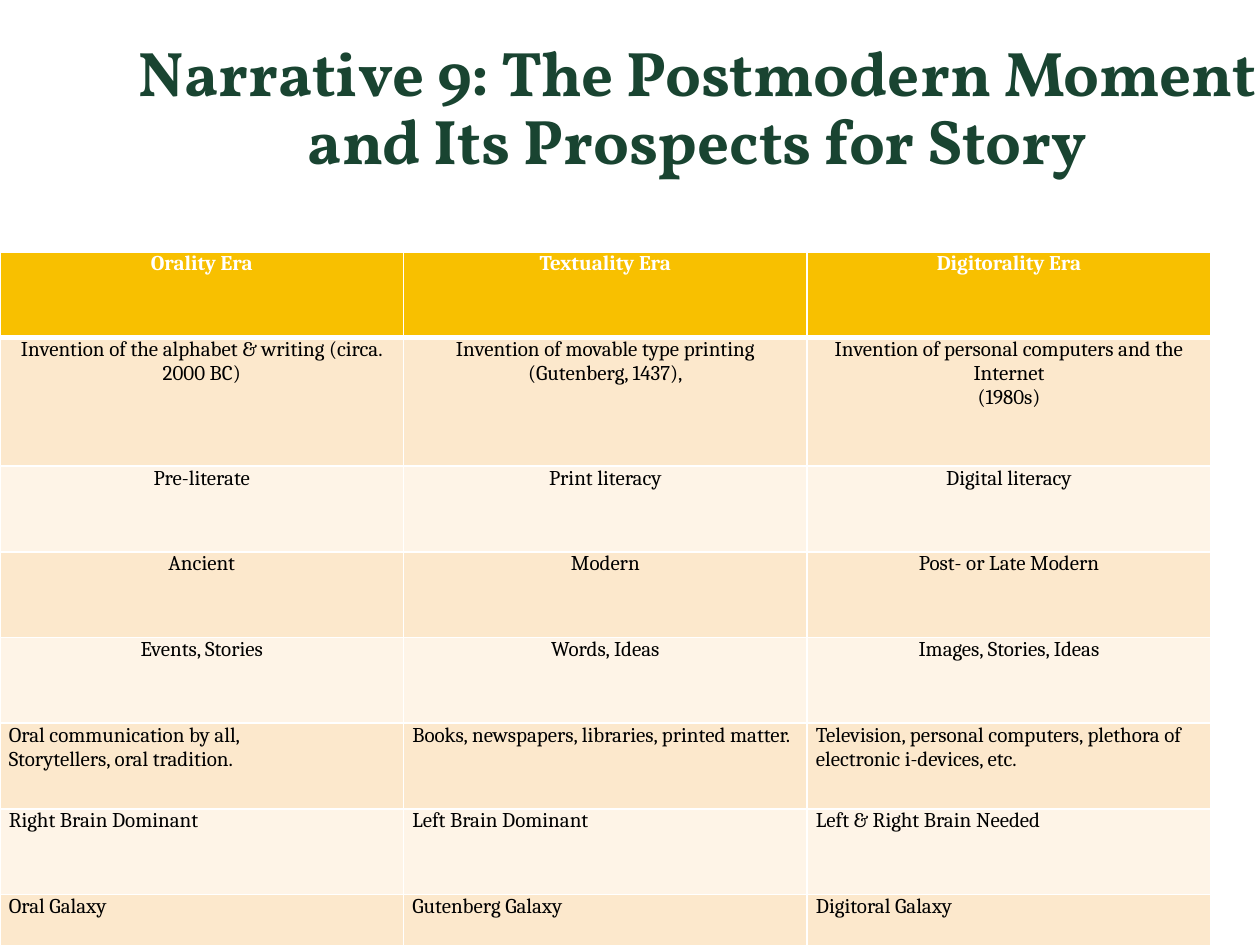
from lxml import etree
from pptx import Presentation
from pptx.dml.color import RGBColor
from pptx.enum.text import MSO_ANCHOR, PP_ALIGN
from pptx.oxml.ns import qn
from pptx.util import Inches, Pt

GREEN = RGBColor(0x19, 0x44, 0x31)
GOLD = RGBColor(0xF8, 0xC0, 0x00)
PEACH = RGBColor(0xFC, 0xE8, 0xCC)
CREAM = RGBColor(0xFE, 0xF4, 0xE7)
WHITE = RGBColor(0xFF, 0xFF, 0xFF)
BLACK = RGBColor(0x00, 0x00, 0x00)

TITLE = "Narrative 9: The Postmodern Moment and Its Prospects for Story"
ERAS = [
    ("Orality Era", "Textuality Era", "Digitorality Era"),
    ("Invention of the alphabet & writing (circa. 2000 BC)",
     "Invention of movable type printing (Gutenberg, 1437),",
     "Invention of personal computers and the Internet\n(1980s)"),
    ("Pre-literate", "Print literacy", "Digital literacy"),
    ("Ancient", "Modern", "Post- or Late Modern"),
    ("Events, Stories", "Words, Ideas", "Images, Stories, Ideas"),
    ("Oral communication by all,\nStorytellers, oral tradition.",
     "Books, newspapers, libraries, printed matter.",
     "Television, personal computers, plethora of electronic i-devices, etc."),
    ("Right Brain Dominant", "Left Brain Dominant", "Left & Right Brain Needed"),
    ("Oral Galaxy", "Gutenberg Galaxy", "Digitoral Galaxy"),
]
CENTERED_ROWS = 5
INVENTION_ROW = 1


def write_text(frame, text, *, font, size, color, bold=False,
               align=PP_ALIGN.LEFT, line_spacing=None):
    """Write each line of text as its own paragraph."""
    frame.word_wrap = True
    for index, line in enumerate(text.split("\n")):
        paragraph = frame.add_paragraph() if index else frame.paragraphs[0]
        paragraph.alignment = align
        paragraph.line_spacing = line_spacing
        run = paragraph.add_run()
        run.text = line
        run.font.name = font
        run.font.size = Pt(size)
        run.font.bold = bold
        run.font.color.rgb = color


def set_borders(cell, bottom_width):
    properties = cell._tc.get_or_add_tcPr()
    widths = {"a:lnL": 1, "a:lnR": 1, "a:lnT": 1, "a:lnB": bottom_width}
    for position, (tag, width) in enumerate(widths.items()):
        line = etree.Element(qn(tag), w=str(Pt(width)))
        fill = etree.SubElement(line, qn("a:solidFill"))
        etree.SubElement(fill, qn("a:srgbClr"), val=str(WHITE))
        properties.insert(position, line)


def add_title(slide, left, top, width, height):
    frame = slide.shapes.add_textbox(left, top, width, height).text_frame
    frame.vertical_anchor = MSO_ANCHOR.MIDDLE
    write_text(frame, TITLE, font="Vollkorn", size=36, color=GREEN, bold=True,
               align=PP_ALIGN.CENTER, line_spacing=0.9)


def fill_cell(cell, text, row):
    is_header = row == 0
    cell.margin_left = cell.margin_right = Inches(0.07)
    cell.margin_top = cell.margin_bottom = 0
    cell.fill.solid()
    cell.fill.fore_color.rgb = GOLD if is_header else PEACH if row % 2 else CREAM
    set_borders(cell, bottom_width=3 if is_header else 1)
    write_text(cell.text_frame, text, font="Cambria", size=12, bold=is_header,
               color=WHITE if is_header else BLACK,
               align=PP_ALIGN.CENTER if row < CENTERED_ROWS else PP_ALIGN.LEFT)


def add_era_table(slide, left, top, width, height):
    row_height = Inches(0.68)
    invention_height = height - row_height * (len(ERAS) - 1)
    table = slide.shapes.add_table(len(ERAS), len(ERAS[0]),
                                   left, top, width, height).table
    for row, texts in enumerate(ERAS):
        table.rows[row].height = (
            invention_height if row == INVENTION_ROW else row_height)
        for column, text in enumerate(texts):
            fill_cell(table.cell(row, column), text, row)


def main():
    presentation = Presentation()
    presentation.slide_width = Inches(10)
    presentation.slide_height = Inches(7.5)
    slide = presentation.slides.add_slide(presentation.slide_layouts[6])
    add_title(slide, Inches(0.66), Inches(0.1), Inches(9.75), Inches(1.55))
    add_era_table(slide, 0, Inches(2), Inches(9.61), Inches(5.78))
    presentation.save("out.pptx")


if __name__ == "__main__":
    main()
